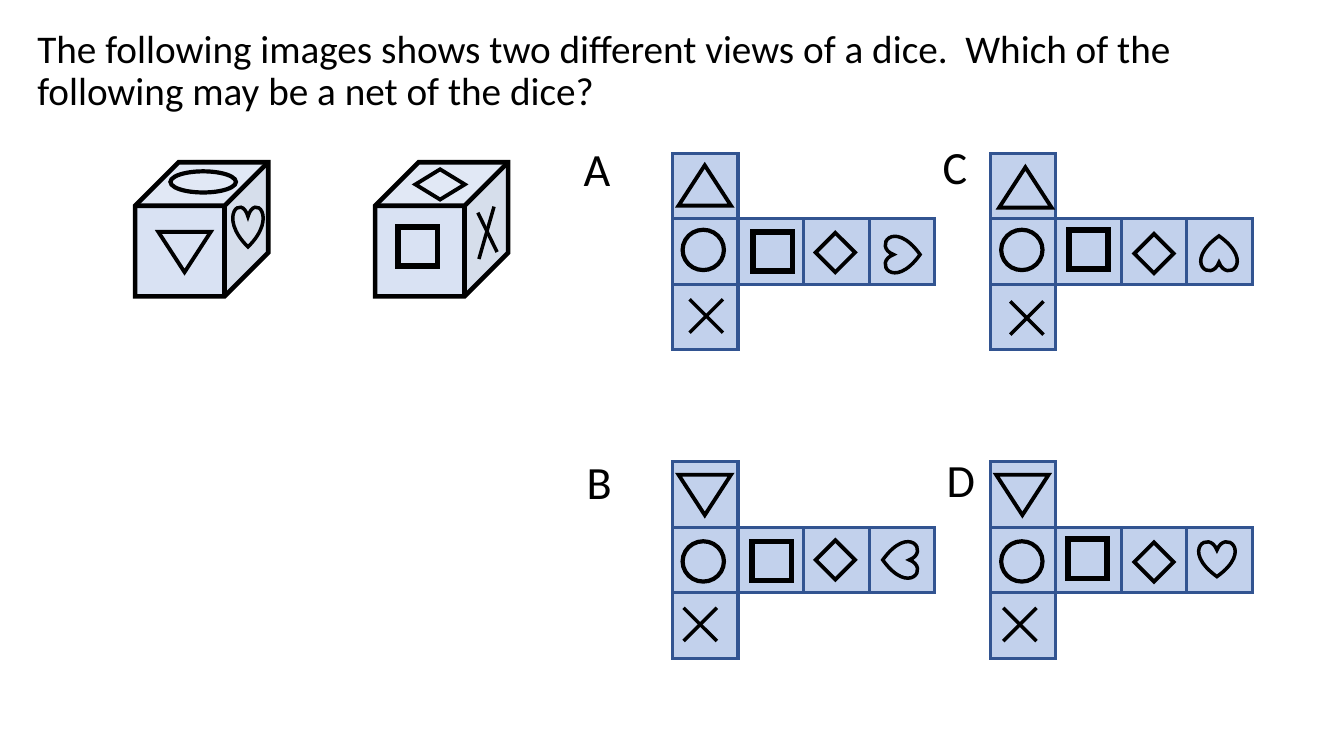
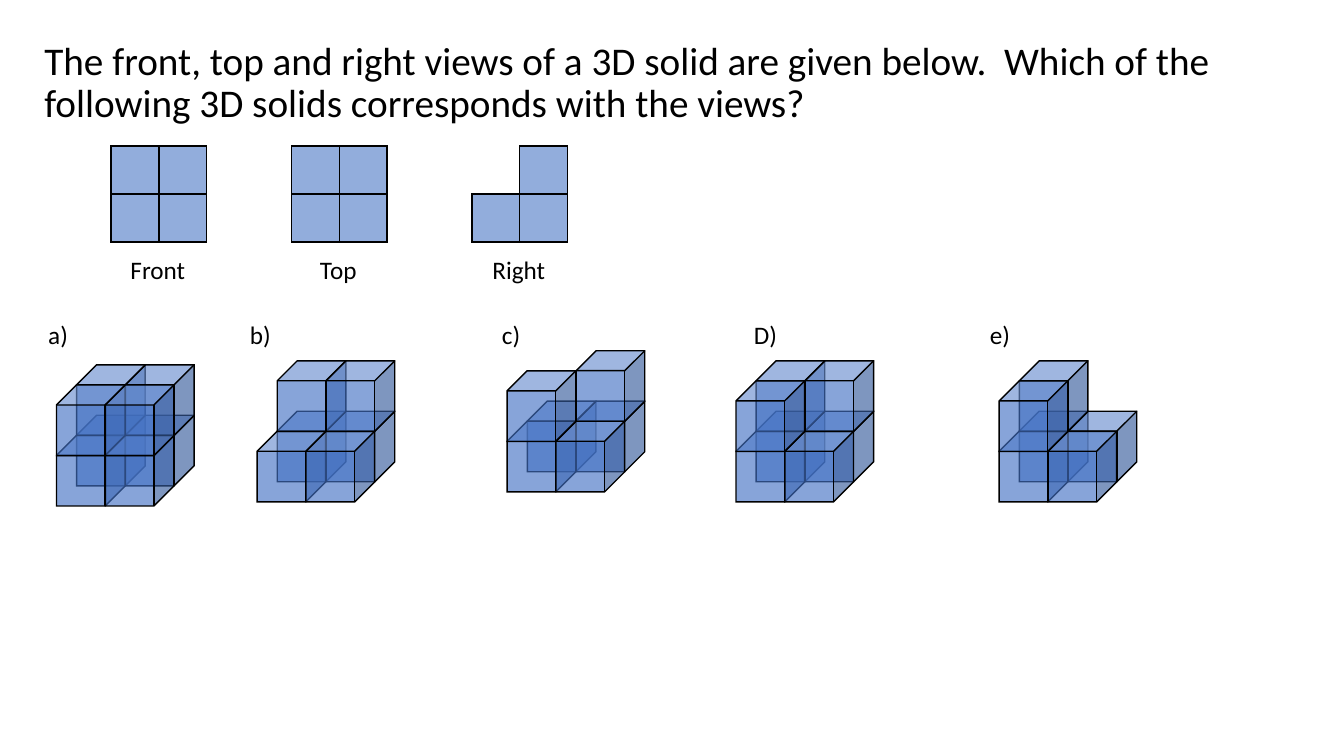
from itertools import product

from lxml import etree
from pptx import Presentation
from pptx import util as u
from pptx.dml.color import RGBColor
from pptx.enum import shapes, text
from pptx.oxml import ns

COLORS = {"ink": "000000", "blue": "4472C4", "edge": "325491"}
FONT = "Calibri"
KIND = shapes.MSO_SHAPE


def add_figure(page, kind, frame, weight, opacity=0, edge="ink", turn=0, depth=None):
    """Outline a preset shape; opacity is the percentage of the blue fill."""
    figure = page.shapes.add_shape(kind, *map(u.Inches, frame))
    figure.shadow.inherit = False
    figure.rotation = turn
    if depth:
        figure.adjustments[0] = depth
    if opacity:
        figure.fill.solid()
        figure.fill.fore_color.rgb = RGBColor.from_string(COLORS["blue"])
        color = figure._element.spPr.find(".//" + ns.qn("a:srgbClr"))
        etree.SubElement(color, ns.qn("a:alpha"), val=str(opacity * 1000))
    else:
        figure.fill.background()
    figure.line.color.rgb = RGBColor.from_string(COLORS[edge])
    figure.line.width = u.Pt(weight)
    etree.SubElement(figure.line._get_or_add_ln(), ns.qn("a:miter"), lim="800000")


def write(box, words, size, align=None):
    box.text_frame.word_wrap = True
    para = box.text_frame.paragraphs[0]
    para.alignment = align
    span = para.add_run()
    span.text = words
    span.font.name = FONT
    span.font.size = u.Pt(size)
    span.font.color.rgb = RGBColor.from_string(COLORS["ink"])
    return para


deck = Presentation()
deck.slide_width, deck.slide_height = u.Inches(13.33), u.Inches(7.5)

# Question at the top of each page
QUESTIONS = [
    ("The following images shows two different views of a dice.  "
     "Which of the following may be a net of the dice?", (0.27, 0.24, 12.15, 1.1)),
    ("The front, top and right views of a 3D solid are given below.  "
     "Which of the following 3D solids corresponds with the views?", (0.34, 0.36, 12.49, 1.09)),
]
for question, frame in QUESTIONS:
    page = deck.slides.add_slide(deck.slide_layouts[1])
    title, body = page.placeholders
    title._element.getparent().remove(title._element)
    body.left, body.top, body.width, body.height = map(u.Inches, frame)
    body.text_frame.auto_size = text.MSO_AUTO_SIZE.NONE
    para = write(body, question, 28)
    para.line_spacing = 0.9
    para.space_before = u.Pt(10)
    props = para._p.get_or_add_pPr()
    props.set("marL", "0")
    props.set("indent", "0")
    etree.SubElement(props, ns.qn("a:buNone"))
dice_page, solid_page = deck.slides

# Dice: two views and four nets
for left in (1.34, 3.72):
    add_figure(dice_page, KIND.CUBE, (left, 1.61, 1.32, 1.33), 3.25, opacity=20, depth=0.327)

CELL = 0.65
CROSS = 0.33
NET_CELLS = [(0, 1), (1, 1), (2, 1), (3, 1), (0, 2), (0, 0)]
MARKS = [  # kind, width, height, line weight
    (KIND.ISOSCELES_TRIANGLE, 0.52, 0.4, 2.75),
    (KIND.OVAL, 0.41, 0.4, 3),
    (KIND.RECTANGLE, 0.39, 0.39, 4),
    (KIND.DIAMOND, 0.39, 0.39, 2.75),
    (KIND.HEART, 0.36, 0.35, 2.5),
]
NETS = [  # label, its corner, net corner, triangle and heart turns, mark corners, cross corner
    ("A", (5.69, 1.34), (6.67, 1.52), 0, 270,
     [(0.06, 0.12), (0.1, 0.76), (0.8, 0.78), (1.42, 0.79), (2.1, 0.83)], (0.17, 1.45)),
    ("B", (5.72, 4.45), (6.67, 4.58), 180, 90,
     [(0.06, 0.13), (0.1, 0.79), (0.79, 0.79), (1.42, 0.78), (2.08, 0.8)], (0.11, 1.45)),
    ("C", (9.25, 1.32), (9.82, 1.52), 0, 180,
     [(0.09, 0.14), (0.11, 0.76), (0.78, 0.76), (1.43, 0.8), (2.09, 0.82)], (0.2, 1.47)),
    ("D", (9.29, 4.43), (9.82, 4.58), 180, 0,
     [(0.06, 0.13), (0.11, 0.79), (0.77, 0.77), (1.43, 0.8), (2.07, 0.79)], (0.13, 1.45)),
]
strokes = [(4.75, 2.57, 4.9, 2.05), (4.74, 2.11, 4.93, 2.5)]
for label, corner, (left, top), triangle_turn, heart_turn, places, cross in NETS:
    for column, row in NET_CELLS:
        frame = (left + column * CELL, top + row * CELL, CELL, CELL)
        add_figure(dice_page, KIND.RECTANGLE, frame, 2.25, opacity=32, edge="edge")
    turns = (triangle_turn, 0, 0, 0, heart_turn)
    for (kind, width, height, weight), (x, y), turn in zip(MARKS, places, turns):
        add_figure(dice_page, kind, (left + x, top + y, width, height), weight, turn=turn)
    x, y = left + cross[0], top + cross[1]
    strokes += [(x, y + CROSS, x + CROSS, y), (x, y, x + CROSS, y + CROSS)]
    box = dice_page.shapes.add_textbox(*map(u.Inches, (*corner, 0.66, 0.66)))
    write(box, label, 33)

DICE_MARKS = [
    (KIND.ISOSCELES_TRIANGLE, (1.57, 2.3, 0.52, 0.4), 2.75, 180),
    (KIND.OVAL, (1.69, 1.7, 0.65, 0.21), 3, 0),
    (KIND.HEART, (2.31, 2.05, 0.3, 0.4), 2.5, 0),
    (KIND.RECTANGLE, (3.95, 2.25, 0.39, 0.39), 4, 0),
    (KIND.DIAMOND, (4.12, 1.68, 0.49, 0.3), 2.75, 0),
]
for kind, frame, weight, turn in DICE_MARKS:
    add_figure(dice_page, kind, frame, weight, turn=turn)

for ends in strokes:
    stroke = dice_page.shapes.add_connector(shapes.MSO_CONNECTOR.STRAIGHT, *map(u.Inches, ends))
    stroke.line.color.rgb = RGBColor.from_string(COLORS["ink"])
    stroke.line.width = u.Pt(2.5)
    etree.SubElement(stroke._element.spPr, ns.qn("a:effectLst"))

# Solids: three flat views
SQUARE = 0.475
SQUARES = [(0, 0), (1, 0), (0, 1), (1, 1)]
VIEWS = [("Front", SQUARES), ("Top", SQUARES), ("Right", SQUARES[1:])]
for index, (name, squares) in enumerate(VIEWS):
    left = 1.1 + index * 1.79
    for column, row in squares:
        frame = (left + column * SQUARE, 1.45 + row * SQUARE, SQUARE, SQUARE)
        add_figure(solid_page, KIND.RECTANGLE, frame, 1, opacity=58)
    box = solid_page.shapes.add_textbox(*map(u.Inches, (left - 0.01, 2.47, 0.95, 0.4)))
    write(box, name, 18, text.PP_ALIGN.CENTER)

# Solids: five answers, each with stack heights back left, front left, back right, front right
ACROSS, BACK, UP = 0.485, 0.2, 0.5
SOLIDS = [
    ("a)", 0.38, (0.56, 4.32), (2, 2, 2, 2)),
    ("b)", 2.38, (2.55, 4.28), (2, 1, 2, 1)),
    ("c)", 4.88, (5.03, 4.18), (1, 2, 2, 1)),
    ("D)", 7.38, (7.3, 4.28), (2, 2, 2, 1)),
    ("e)", 9.72, (9.91, 4.28), (2, 2, 1, 1)),
]
for label, label_left, (left, top), heights in SOLIDS:
    for level, (stack, height) in product(range(2), enumerate(heights)):
        if level < height:
            column, is_back = stack // 2, 1 - stack % 2
            frame = (left + column * ACROSS + is_back * BACK,
                     top - level * UP - is_back * BACK, 0.68, 0.7)
            add_figure(solid_page, KIND.CUBE, frame, 1, opacity=64, depth=0.291)
    box = solid_page.shapes.add_textbox(*map(u.Inches, (label_left, 3.12, 0.6, 0.4)))
    write(box, label, 18)

deck.save("out.pptx")
